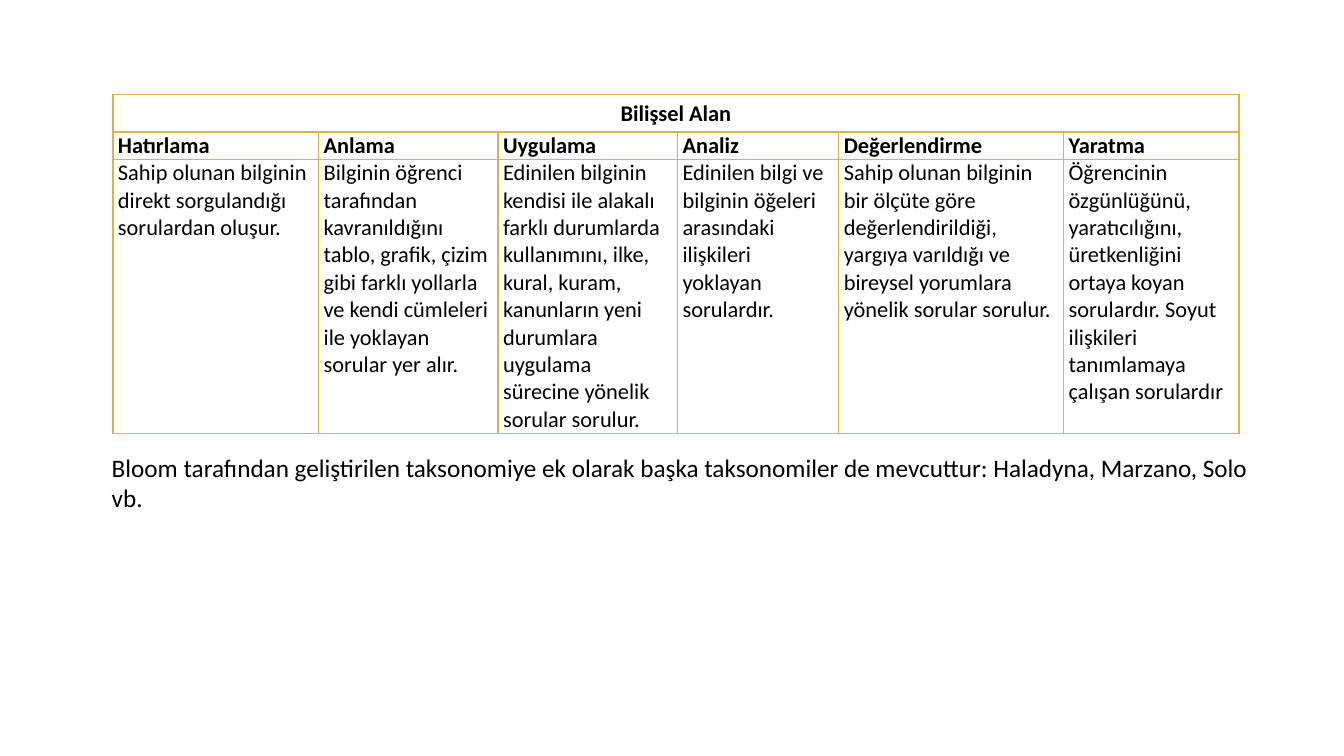
from lxml import etree
from pptx import Presentation
from pptx.dml.color import RGBColor
from pptx.enum.text import MSO_ANCHOR, MSO_AUTO_SIZE, PP_ALIGN
from pptx.oxml.ns import qn
from pptx.util import Inches, Pt

BLACK = RGBColor(0x00, 0x00, 0x00)
GOLD = RGBColor(0xDE, 0xB3, 0x40)
FONT = "Calibri"

TITLE = "Bilişsel Alan"
LEVELS = [
    ("Hatırlama", 2.04, "Sahip olunan bilginin direkt sorgulandığı sorulardan oluşur."),
    ("Anlama", 1.78, "Bilginin öğrenci tarafından kavranıldığını tablo, grafik, çizim gibi "
     "farklı yollarla ve kendi cümleleri ile yoklayan sorular yer alır."),
    ("Uygulama", 1.78, "Edinilen bilginin kendisi ile alakalı farklı durumlarda kullanımını, "
     "ilke, kural, kuram, kanunların yeni durumlara uygulama sürecine yönelik sorular sorulur."),
    ("Analiz", 1.6, "Edinilen bilgi ve bilginin öğeleri arasındaki ilişkileri yoklayan sorulardır."),
    ("Değerlendirme", 2.23, "Sahip olunan bilginin bir ölçüte göre değerlendirildiği, yargıya "
     "varıldığı ve bireysel yorumlara yönelik sorular sorulur."),
    ("Yaratma", 1.74, "Öğrencinin özgünlüğünü, yaratıcılığını, üretkenliğini ortaya koyan "
     "sorulardır. Soyut ilişkileri tanımlamaya çalışan sorulardır"),
]
ROW_HEIGHTS = [0.37, 0.22, 2.23]
NOTE = ("Bloom tarafından geliştirilen taksonomiye ek olarak başka taksonomiler de "
        "mevcuttur: Haladyna, Marzano, Solo vb.")


def add_text(paragraph, text, size, bold=False):
    run = paragraph.add_run()
    run.text = text
    run.font.name = FONT
    run.font.size = Pt(size)
    run.font.bold = bold
    run.font.color.rgb = BLACK


def set_borders(cell):
    properties = cell._tc.get_or_add_tcPr()
    for position, side in enumerate(("lnL", "lnR", "lnT", "lnB")):
        line = etree.Element(qn(f"a:{side}"), w=str(Pt(1)))
        fill = etree.SubElement(line, qn("a:solidFill"))
        etree.SubElement(fill, qn("a:srgbClr"), val=str(GOLD))
        properties.insert(position, line)


def fill_cell(cell, text, bold=False, alignment=PP_ALIGN.LEFT):
    paragraph = cell.text_frame.paragraphs[0]
    paragraph.alignment = alignment
    add_text(paragraph, text, 16, bold)


def add_taxonomy_table(slide, left, top, width, height):
    shape = slide.shapes.add_table(len(ROW_HEIGHTS), len(LEVELS), Inches(left), Inches(top),
                                   Inches(width), Inches(height))
    table = shape.table
    table.first_row = False
    table.horz_banding = False
    for row, row_height in zip(table.rows, ROW_HEIGHTS):
        row.height = Inches(row_height)
    for cell in table.iter_cells():
        cell.margin_left = cell.margin_right = Inches(0.05)
        cell.margin_top = cell.margin_bottom = 0
        cell.fill.background()
        set_borders(cell)
    title_cell = table.cell(0, 0)
    title_cell.merge(table.cell(0, len(LEVELS) - 1))
    title_cell.vertical_anchor = MSO_ANCHOR.MIDDLE
    fill_cell(title_cell, TITLE, True, PP_ALIGN.CENTER)
    for index, (name, column_width, description) in enumerate(LEVELS):
        table.columns[index].width = Inches(column_width)
        alignment = PP_ALIGN.LEFT if name == "Analiz" else PP_ALIGN.JUSTIFY
        fill_cell(table.cell(1, index), name, True, alignment)
        fill_cell(table.cell(2, index), description)


def add_note(slide, left, top, width, height):
    box = slide.shapes.add_textbox(Inches(left), Inches(top), Inches(width), Inches(height))
    frame = box.text_frame
    frame.word_wrap = True
    frame.auto_size = MSO_AUTO_SIZE.SHAPE_TO_FIT_TEXT
    add_text(frame.paragraphs[0], NOTE, 18)


def main():
    presentation = Presentation()
    presentation.slide_width = Inches(13.33)
    presentation.slide_height = Inches(7.5)
    slide = presentation.slides.add_slide(presentation.slide_layouts[6])
    add_taxonomy_table(slide, 1.12, 0.94, 11.17, sum(ROW_HEIGHTS))
    add_note(slide, 1.01, 4.44, 11.69, 0.4)
    presentation.save("out.pptx")


if __name__ == "__main__":
    main()
